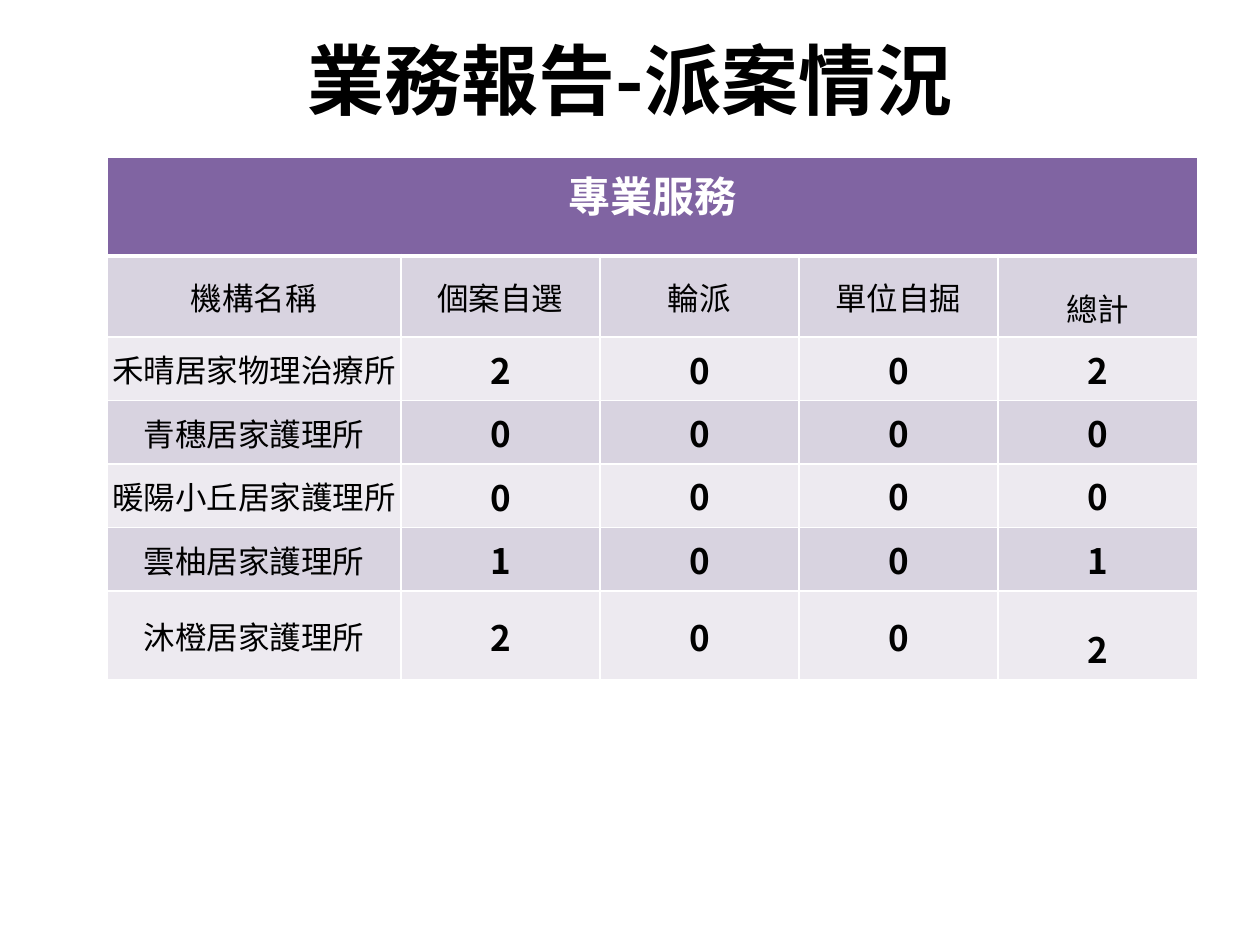
"""Build the slide that reports how cases were assigned for professional services."""
from dataclasses import dataclass

from lxml.etree import SubElement
from pptx import Presentation
from pptx.dml.color import RGBColor
from pptx.enum.text import MSO_ANCHOR, PP_ALIGN
from pptx.oxml import parse_xml
from pptx.oxml.ns import nsdecls, qn
from pptx.util import Pt

TITLE = "業務報告-派案情況"
SERVICE = "專業服務"
HEADINGS = ["機構名稱", "個案自選", "輪派", "單位自掘", "總計"]
AGENCIES = [
    ("禾晴居家物理治療所", 2, 0, 0, 2),
    ("青穗居家護理所", 0, 0, 0, 0),
    ("暖陽小丘居家護理所", 0, 0, 0, 0),
    ("雲柚居家護理所", 1, 0, 0, 1),
    ("沐橙居家護理所", 2, 0, 0, 2),
]

SLIDE_SIZE = (1260, 945)
TITLE_AREA = (63, 0, 1134, 157)
TABLE_AREA = (107, 157, 1091, 480)
COLUMN_WIDTHS = [294, 199, 199, 199, 200]
ROW_HEIGHTS = [99, 80, 49, 57, 58, 58, 49]


@dataclass(frozen=True)
class Theme:
    font: str = "Noto Sans CJK SC"
    black: str = "000000"
    white: str = "FFFFFF"
    purple: str = "8064A2"
    bands: tuple = ("D8D3E0", "EDEAF0")
    title_size: int = 44
    service_size: int = 24
    number_size: int = 20
    label_size: int = 18
    thin: int = 1
    thick: int = 3


THEME = Theme()


def px(length):
    return round(length * 914400 / 126)


def write(frame, text, size, color, bold, spacing=None):
    para = frame.paragraphs[0]
    para.text = text
    para.alignment = PP_ALIGN.CENTER
    if spacing:
        para.line_spacing = spacing
    font = para.font
    font.size, font.bold, font.name = Pt(size), bold, THEME.font
    font.color.rgb = RGBColor.from_string(color)
    properties = para._p.pPr.find(qn("a:defRPr"))
    SubElement(properties, qn("a:ea"), typeface=THEME.font)


def paint(cell, color, top, bottom):
    cell.fill.solid()
    cell.fill.fore_color.rgb = RGBColor.from_string(color)
    borders = {"lnL": THEME.thin, "lnR": THEME.thin, "lnT": top, "lnB": bottom}
    for place, (side, width) in enumerate(borders.items()):
        line = parse_xml(
            f'<a:{side} {nsdecls("a")} w="{Pt(width)}"><a:solidFill>'
            f'<a:srgbClr val="{THEME.white}"/></a:solidFill></a:{side}>'
        )
        cell._tc.tcPr.insert(place, line)


def tighten(cell):
    cell.vertical_anchor = MSO_ANCHOR.MIDDLE
    cell.margin_left = cell.margin_right = cell.margin_top = px(1)
    cell.margin_bottom = 0


def add_title(page):
    box = page.shapes.add_textbox(*map(px, TITLE_AREA))
    box.text_frame.word_wrap = True
    box.text_frame.vertical_anchor = MSO_ANCHOR.MIDDLE
    write(box.text_frame, TITLE, THEME.title_size, THEME.black, True)


def add_cases(page):
    rows = [HEADINGS, *AGENCIES]
    last_row, last_column = len(rows), len(HEADINGS) - 1
    table = page.shapes.add_table(
        last_row + 1, last_column + 1, *map(px, TABLE_AREA)
    ).table
    for column, width in zip(table.columns, COLUMN_WIDTHS):
        column.width = px(width)
    for row, height in zip(table.rows, ROW_HEIGHTS):
        row.height = px(height)

    for cell in table.rows[0].cells:
        paint(cell, THEME.purple, THEME.thin, THEME.thick)
    service = table.cell(0, 0)
    service.merge(table.cell(0, last_column))
    write(service.text_frame, SERVICE, THEME.service_size, THEME.white, True)

    for r, values in enumerate(rows, 1):
        is_edge = r in (1, last_row)
        for c, value in enumerate(values):
            cell = table.cell(r, c)
            top = THEME.thick if r == 1 else THEME.thin
            paint(cell, THEME.bands[(r - 1) % 2], top, THEME.thin)
            if c < 2 or (is_edge and c < last_column):
                tighten(cell)
            is_number = isinstance(value, int)
            size = THEME.number_size if is_number else THEME.label_size
            spacing = 1.5 if is_edge and c == last_column else None
            write(cell.text_frame, str(value), size, THEME.black, is_number, spacing)


def main():
    deck = Presentation()
    deck.slide_width, deck.slide_height = map(px, SLIDE_SIZE)
    page = deck.slides.add_slide(deck.slide_layouts[6])
    add_cases(page)
    add_title(page)
    deck.save("out.pptx")


if __name__ == "__main__":
    main()
